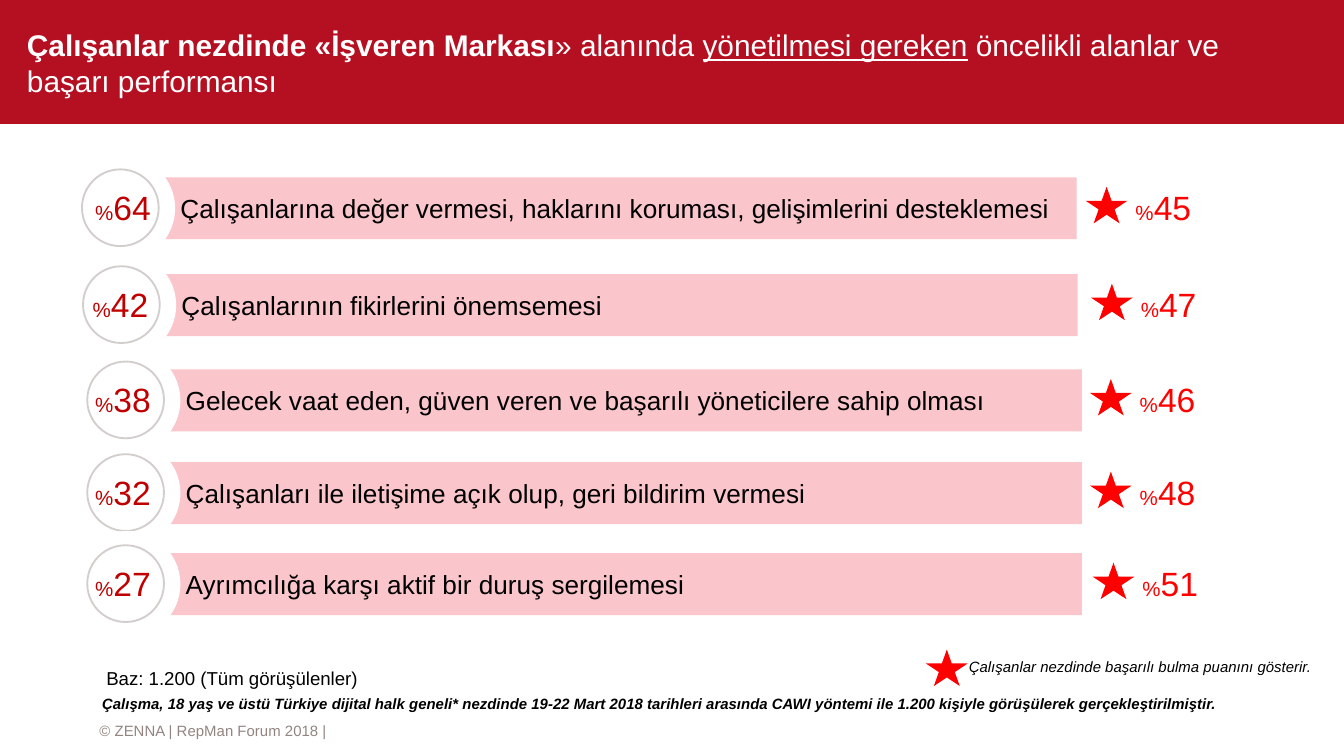
from pptx import Presentation
from pptx.dml.color import RGBColor
from pptx.enum.shapes import MSO_SHAPE
from pptx.enum.text import MSO_ANCHOR, MSO_AUTO_SIZE, PP_ALIGN
from pptx.util import Cm, Pt

COLORS = {
    "band": "B50F22",
    "bar": "FAC5CB",
    "ring": "D3CECC",
    "share": "C00000",
    "star": "FF0000",
    "footer": "928580",
    "white": "FFFFFF",
    "black": "000000",
}


def add_shape(kind, left, top, width, height, fill=None, line=None):
    shape = page.shapes.add_shape(kind, Cm(left), Cm(top), Cm(width), Cm(height))
    shape.shadow.inherit = False
    if fill:
        shape.fill.solid()
        shape.fill.fore_color.rgb = RGBColor.from_string(COLORS[fill])
    else:
        shape.fill.background()
    if line:
        shape.line.color.rgb = RGBColor.from_string(COLORS[line])
        shape.line.width = Pt(1)
    else:
        shape.line.fill.background()
    return shape


def write(shape, spans, color, margins=(0, 0, 0, 0), anchor=MSO_ANCHOR.TOP):
    frame = shape.text_frame
    frame.word_wrap = True
    frame.auto_size = MSO_AUTO_SIZE.NONE
    frame.vertical_anchor = anchor
    frame.margin_left, frame.margin_top, frame.margin_right, frame.margin_bottom = map(Cm, margins)
    para = frame.paragraphs[0]
    para.alignment = PP_ALIGN.LEFT
    for text, size, style in spans:
        span = para.add_run()
        span.text = text
        span.font.name = "Arial"
        span.font.size = Pt(size)
        span.font.bold = "b" in style
        span.font.italic = "i" in style
        span.font.underline = "u" in style
        span.font.color.rgb = RGBColor.from_string(COLORS[color])
    return frame


deck = Presentation()
deck.slide_width, deck.slide_height = Cm(25.4), Cm(14.28)
page = deck.slides.add_slide(deck.slide_layouts[5])
inset = (0.25, 0.13, 0.25, 0.13)

title = page.shapes.title
title.left, title.top, title.width, title.height = Cm(0.51), Cm(0.2), Cm(23.6), Cm(1.96)
write(title, [
    ("Çalışanlar nezdinde «İşveren Markası", 16, "b"),
    ("» alanında ", 16, ""),
    ("yönetilmesi gereken", 16, "u"),
    (" öncelikli alanlar ve başarı performansı", 16, ""),
], "white", anchor=MSO_ANCHOR.MIDDLE)

footer = add_shape(MSO_SHAPE.RECTANGLE, 1.88, 13.59, 19.61, 0.41, "white")
write(footer, [("© ZENNA | RepMan Forum 2018 |", 8, "")], "footer", anchor=MSO_ANCHOR.MIDDLE)

band = add_shape(MSO_SHAPE.RECTANGLE, 0, 0, 25.4, 2.34, "band")
title._element.addprevious(band._element)

rows = [
    (2.01, 3.35, 1.55, 20.52, "64", "45", "Çalışanlarına değer vermesi, haklarını koruması, gelişimlerini desteklemesi"),
    (2.03, 5.18, 1.5, 20.62, "42", "47", "Çalışanlarının fikirlerini önemsemesi"),
    (2.11, 6.98, 1.55, 20.6, "38", "46", "Gelecek vaat eden, güven veren ve başarılı yöneticilere sahip olması"),
    (2.11, 8.73, 1.55, 20.6, "32", "48", "Çalışanları ile iletişime açık olup, geri bildirim vermesi"),
    (2.11, 10.45, 1.55, 20.65, "27", "51", "Ayrımcılığa karşı aktif bir duruş sergilemesi"),
]
for left, top, share_left, star_left, share, score, label in rows:
    bar = add_shape(MSO_SHAPE.RECTANGLE, left, top, 18.34, 1.17, "bar")
    write(bar, [(label, 14, "")], "black", (1.4, 0.13, 0.25, 0.13), MSO_ANCHOR.MIDDLE)
    add_shape(MSO_SHAPE.OVAL, left - 0.71, top - 0.42, 2.01, 2.01, "white")
    add_shape(MSO_SHAPE.OVAL, left - 0.46, top - 0.15, 1.45, 1.45, line="ring")
    add_shape(MSO_SHAPE.STAR_5_POINT, star_left, top + 0.18, 0.79, 0.69, "star")
    for number, number_left, color in ((share, share_left, "share"), (score, star_left + 0.69, "star")):
        box = page.shapes.add_textbox(Cm(number_left), Cm(top + 0.05), Cm(1.57), Cm(1.02))
        frame = write(box, [("%", 11, ""), (number, 18, "")], color, inset)
        frame.word_wrap = False
        frame.auto_size = MSO_AUTO_SIZE.SHAPE_TO_FIT_TEXT

base = page.shapes.add_textbox(Cm(2.01), Cm(12.6), Cm(11.73), Cm(0.46))
write(base, [("Baz: 1.200 (Tüm görüşülenler)", 10, "")], "black")

add_shape(MSO_SHAPE.STAR_5_POINT, 17.5, 12.27, 0.79, 0.69, "star")
legend = page.shapes.add_textbox(Cm(18.31), Cm(12.42), Cm(6.6), Cm(0.38))
write(legend, [("Çalışanlar nezdinde başarılı bulma puanını gösterir.", 8, "i")], "black")

method = page.shapes.add_textbox(Cm(1.68), Cm(13), Cm(22.81), Cm(0.61))
frame = write(method, [(
    "Çalışma, 18 yaş ve üstü Türkiye dijital halk geneli* nezdinde 19-22 Mart 2018 tarihleri arasında "
    "CAWI yöntemi ile 1.200 kişiyle görüşülerek gerçekleştirilmiştir.", 8, "bi")], "black", inset)
frame.auto_size = MSO_AUTO_SIZE.SHAPE_TO_FIT_TEXT
frame.paragraphs[0].alignment = PP_ALIGN.JUSTIFY

deck.save("out.pptx")
